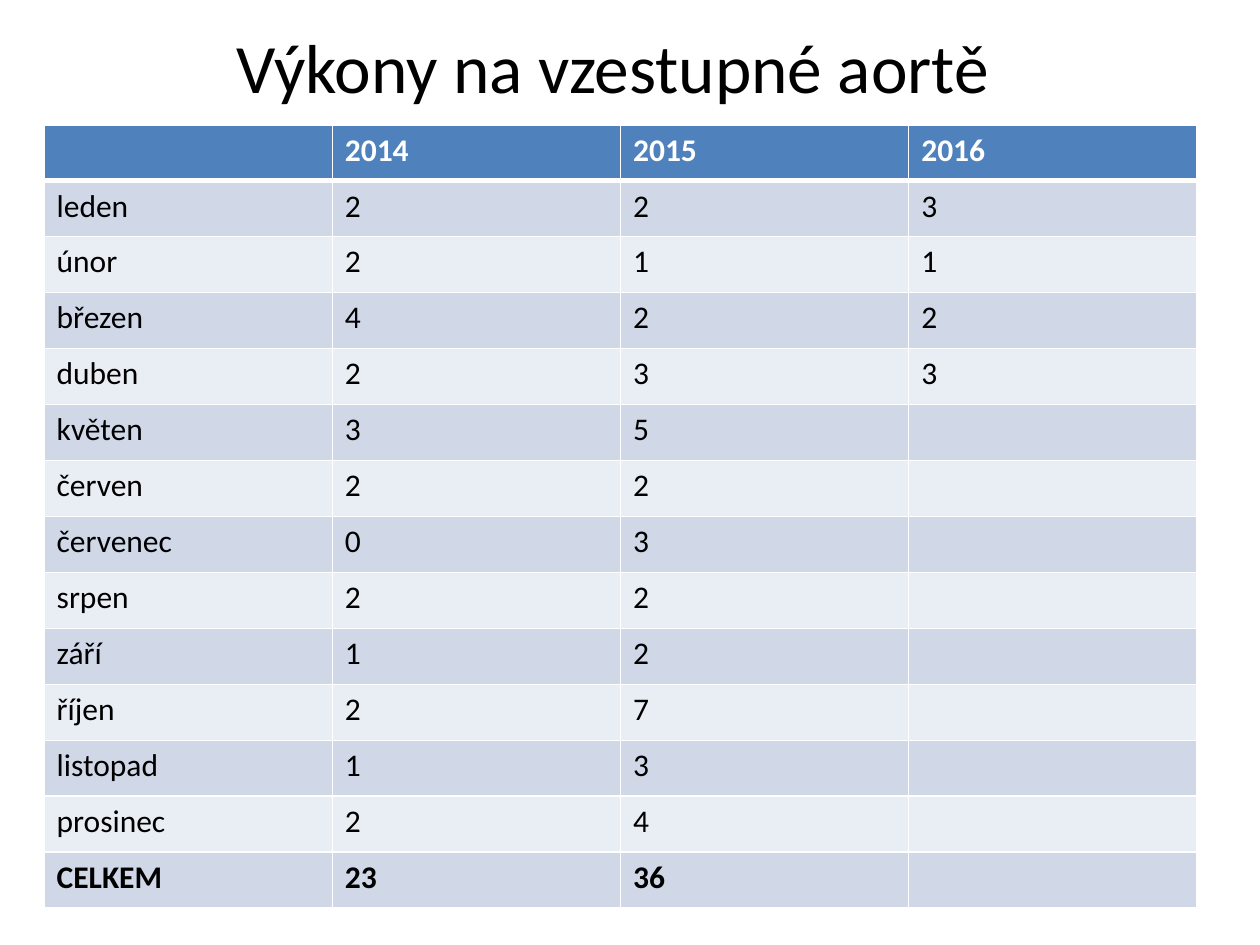
from lxml.etree import SubElement
from pptx import Presentation
from pptx.dml.color import RGBColor
from pptx.enum.text import MSO_ANCHOR, PP_ALIGN
from pptx.oxml.ns import qn
from pptx.util import Inches, Pt

BLACK = RGBColor(0x00, 0x00, 0x00)
WHITE = RGBColor(0xFF, 0xFF, 0xFF)
HEADER = RGBColor(0x4F, 0x81, 0xBD)
BAND_DARK = RGBColor(0xD0, 0xD8, 0xE8)
BAND_LIGHT = RGBColor(0xE9, 0xED, 0xF4)

ROWS = [
    ("", "2014", "2015", "2016"),
    ("leden", "2", "2", "3"),
    ("únor", "2", "1", "1"),
    ("březen", "4", "2", "2"),
    ("duben", "2", "3", "3"),
    ("květen", "3", "5", ""),
    ("červen", "2", "2", ""),
    ("červenec", "0", "3", ""),
    ("srpen", "2", "2", ""),
    ("září", "1", "2", ""),
    ("říjen", "2", "7", ""),
    ("listopad", "1", "3", ""),
    ("prosinec", "2", "4", ""),
    ("CELKEM", "23", "36", ""),
]


def write(tf, text, size=18, color=BLACK, bold=False, align=PP_ALIGN.LEFT, font="Calibri"):
    p = tf.paragraphs[0]
    p.alignment = align
    p.font.size = Pt(size)
    if text:
        r = p.add_run()
        r.text = text
        r.font.name = font
        r.font.size = Pt(size)
        r.font.bold = bold
        r.font.color.rgb = color


def set_borders(cell, **widths):
    """Draw white cell borders; widths in points by side (L, R, T, B)."""
    tc_pr = cell._tc.get_or_add_tcPr()
    for side in "LRTB":
        ln = SubElement(tc_pr, qn(f"a:ln{side}"), w=str(Pt(widths.get(side, 1))))
        fill = SubElement(ln, qn("a:solidFill"))
        SubElement(fill, qn("a:srgbClr"), val=str(WHITE))


class SlideBuilder:
    def __init__(self, prs):
        self.slide = prs.slides.add_slide(prs.slide_layouts[6])
        self.left, self.width = Inches(0.35), Inches(9.15)

    def title(self, text, top, height):
        sp = self.slide.shapes.add_textbox(self.left, top, self.width, height)
        tf = sp.text_frame
        tf.word_wrap = True
        tf.vertical_anchor = MSO_ANCHOR.MIDDLE
        write(tf, text, size=39.6, align=PP_ALIGN.CENTER)

    def table(self, rows, top, height):
        last = len(rows) - 1
        frame = self.slide.shapes.add_table(
            len(rows), len(rows[0]), self.left, top, self.width, height)
        for i, values in enumerate(rows):
            if i == 0:
                fill, color = HEADER, WHITE
            else:
                fill, color = (BAND_DARK if i % 2 else BAND_LIGHT), BLACK
            for j, text in enumerate(values):
                cell = frame.table.cell(i, j)
                set_borders(cell, T=3 if i == 1 else 1, B=3 if i == 0 else 1)
                cell.fill.solid()
                cell.fill.fore_color.rgb = fill
                write(cell.text_frame, text, color=color, bold=i in (0, last))


def main():
    prs = Presentation()
    prs.slide_width, prs.slide_height = Inches(10), Inches(7.5)
    s = SlideBuilder(prs)

    # Heading
    s.title("Výkony na vzestupné aortě ", Inches(0.21), Inches(0.63))

    # Monthly counts with the yearly total
    s.table(ROWS, Inches(0.99), Inches(6.22))

    prs.save("out.pptx")


if __name__ == "__main__":
    main()
